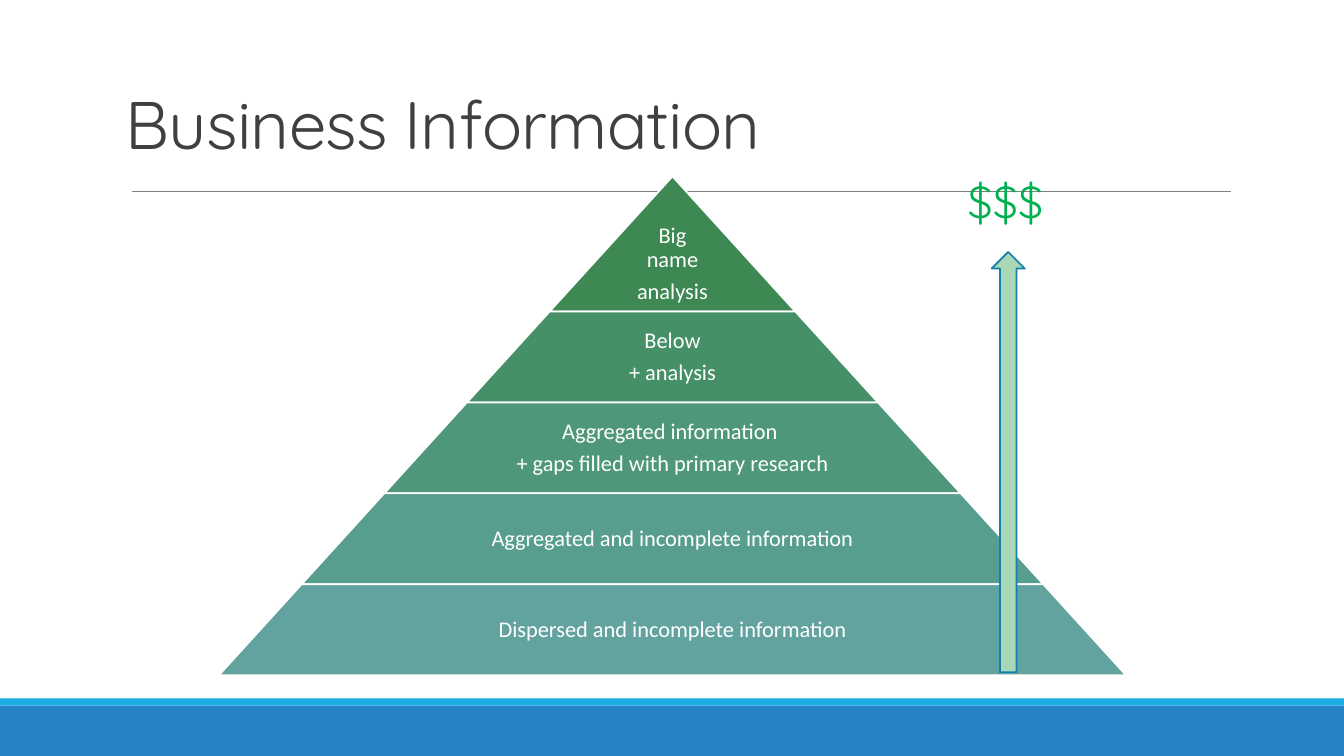
import pptx
import pptx.dml.color
import pptx.enum.shapes
import pptx.enum.text
import pptx.oxml
import pptx.util

Inches = pptx.util.Inches
Pt = pptx.util.Pt
RGBColor = pptx.dml.color.RGBColor
SHAPE = pptx.enum.shapes.MSO_SHAPE
ANCHOR = pptx.enum.text.MSO_ANCHOR
ALIGN = pptx.enum.text.PP_ALIGN

WHITE = RGBColor(0xFF, 0xFF, 0xFF)
TITLE_GRAY = RGBColor(0x40, 0x40, 0x40)
RULE_GRAY = RGBColor(0x80, 0x80, 0x80)
FOOTER_BLUE = RGBColor(0x26, 0x83, 0xC6)
FOOTER_CYAN = RGBColor(0x1C, 0xAD, 0xE4)
ARROW_FILL = RGBColor(0xA9, 0xD8, 0xB7)
ARROW_LINE = RGBColor(0x15, 0x80, 0xA9)
PRICE_GREEN = RGBColor(0x00, 0xB0, 0x50)

SLIDE_WIDTH, SLIDE_HEIGHT = 13.33, 7.5
APEX_HEIGHT = 1.34
SLOPE = 0.909  # horizontal run of each pyramid side per unit of height
LEVELS = [
    (["Big name", "analysis"], RGBColor(0x3E, 0x88, 0x53)),
    (["Below", "+ analysis"], RGBColor(0x46, 0x90, 0x67)),
    (["Aggregated information ", "+ gaps filled with primary research"],
     RGBColor(0x4E, 0x97, 0x7B)),
    (["Aggregated and incomplete information"], RGBColor(0x57, 0x9E, 0x8E)),
    (["Dispersed and incomplete information"], RGBColor(0x62, 0xA3, 0x9F)),
]


def add_filled_shape(slide, kind, left, top, width, height, fill, line=None):
    shape = slide.shapes.add_shape(
        kind, Inches(left), Inches(top), Inches(width), Inches(height))
    shape.shadow.inherit = False
    shape.fill.solid()
    shape.fill.fore_color.rgb = fill
    if line is None:
        shape.line.fill.background()
    else:
        shape.line.color.rgb = line
        shape.line.width = Pt(1.25)
    return shape


def add_run(paragraph, text, font_name, size, color):
    run = paragraph.add_run()
    run.text = text
    run.font.name = font_name
    run.font.size = Pt(size)
    run.font.color.rgb = color
    return run


def add_text_box(slide, left, top, width, height):
    box = slide.shapes.add_textbox(
        Inches(left), Inches(top), Inches(width), Inches(height))
    box.text_frame.word_wrap = True
    return box.text_frame


def add_footer(slide, top, height):
    stripe = 0.07
    add_filled_shape(slide, SHAPE.RECTANGLE, 0, top + stripe,
                     SLIDE_WIDTH, height - stripe, FOOTER_BLUE)
    add_filled_shape(slide, SHAPE.RECTANGLE, 0, top,
                     SLIDE_WIDTH, stripe, FOOTER_CYAN)


def add_title(slide, left, top, width, height):
    """Title text with the thin rule below it."""
    rule_left, rule_top, rule_width = left + 0.16, top + height + 0.23, 10.9
    rule = slide.shapes.add_connector(
        pptx.enum.shapes.MSO_CONNECTOR.STRAIGHT,
        Inches(rule_left), Inches(rule_top),
        Inches(rule_left + rule_width), Inches(rule_top))
    rule.line.color.rgb = RULE_GRAY
    rule.line.width = Pt(0.5)
    rule._element.spPr.append(pptx.oxml.parse_xml(
        '<a:effectLst xmlns:a="http://schemas.openxmlformats.org/drawingml/2006/main"/>'))

    frame = add_text_box(slide, left, top, width, height)
    frame.vertical_anchor = ANCHOR.BOTTOM
    paragraph = frame.paragraphs[0]
    paragraph.line_spacing = 0.85
    run = add_run(paragraph, "Business Information", "Quicksand", 48, TITLE_GRAY)
    run.font._element.set("spc", "-50")


def add_level(slide, center, top, width, height, lines, fill, is_apex):
    level = add_filled_shape(slide, SHAPE.TRAPEZOID, center - width / 2, top,
                             width, height, fill, WHITE)
    level.adjustments[0] = SLOPE
    frame = level.text_frame
    frame.word_wrap = True
    frame.margin_left = frame.margin_right = frame.margin_top = Inches(0.02)
    if is_apex:
        frame.vertical_anchor = ANCHOR.BOTTOM
        frame.margin_bottom = Inches(0.07)
    else:
        # A trapezoid's text area starts lower than its top; balance that below.
        frame.vertical_anchor = ANCHOR.MIDDLE
        frame.margin_bottom = Inches(0.02 + height / 3 * SLOPE * 2 * height / width)
    for index, line in enumerate(lines):
        paragraph = frame.add_paragraph() if index else frame.paragraphs[0]
        paragraph.alignment = ALIGN.CENTER
        paragraph.line_spacing = 0.9
        paragraph.space_after = Pt(5.5)
        add_run(paragraph, line, "Calibri", 16, WHITE)


def add_pyramid(slide, left, top, width, height):
    band_height = (height - APEX_HEIGHT) / (len(LEVELS) - 1)
    for index, (lines, fill) in enumerate(LEVELS):
        depth = APEX_HEIGHT + index * band_height
        level_height = band_height if index else APEX_HEIGHT
        add_level(slide, left + width / 2, top + depth - level_height,
                  2 * SLOPE * depth, level_height, lines, fill, index == 0)


def add_price_arrow(slide, left, top, width, height):
    """Arrow rising to the price label."""
    label_height, arrow_width, arrow_offset = 0.64, 0.33, 0.83
    add_filled_shape(slide, SHAPE.UP_ARROW, left + (width - arrow_width) / 2,
                     top + arrow_offset, arrow_width, height - arrow_offset,
                     ARROW_FILL, ARROW_LINE)
    frame = add_text_box(slide, left, top, width, label_height)
    add_run(frame.paragraphs[0], "$$$", "Quicksand", 32, PRICE_GREEN)


def main():
    presentation = pptx.Presentation()
    presentation.slide_width = Inches(SLIDE_WIDTH)
    presentation.slide_height = Inches(SLIDE_HEIGHT)
    slide = presentation.slides.add_slide(presentation.slide_layouts[6])
    add_footer(slide, 6.93, 0.57)
    add_title(slide, 1.15, 0.85, 9.08, 0.82)
    add_pyramid(slide, 2.17, 1.75, 9, 4.95)
    add_price_arrow(slide, 9.5, 1.67, 1, 5)
    presentation.save("out.pptx")


if __name__ == "__main__":
    main()
